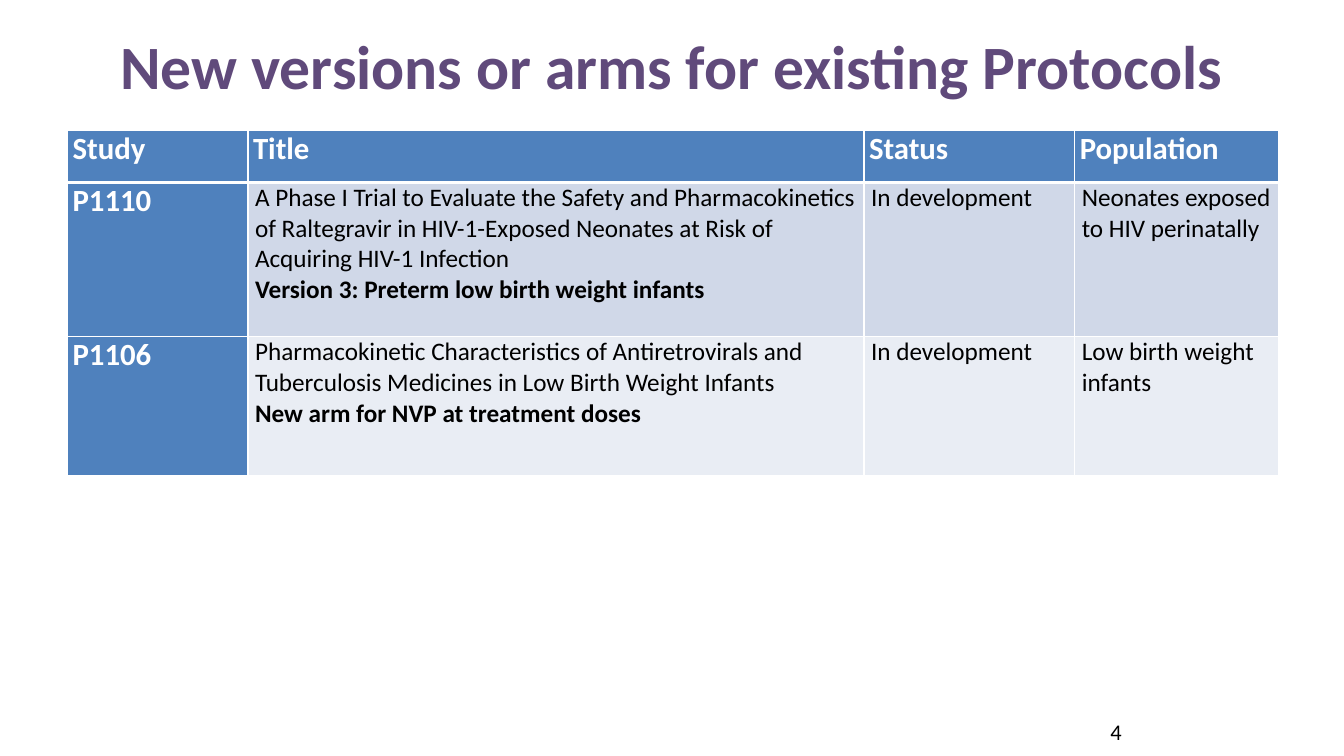
from dataclasses import dataclass
from lxml.etree import SubElement
from pptx import Presentation
from pptx.dml.color import RGBColor as RGB
from pptx.enum.text import MSO_ANCHOR as Anchor, PP_ALIGN as Align
from pptx.oxml.ns import qn
from pptx.util import Inches, Pt


@dataclass(frozen=True)
class Theme:
    font: str = "Calibri"
    heading: str = "604A7B"
    accent: str = "4F81BD"
    bands: tuple = ("D0D8E8", "E9EDF4")
    light: str = "FFFFFF"
    dark: str = "000000"
    heading_size: int = 44
    label_size: int = 22
    body_size: int = 18
    number_size: int = 16
    rule: int = 1
    header_rule: int = 3


THEME = Theme()
WIDTH, HEIGHT = 13.33, 7.5
MARGIN = 0.67
TITLE_HEIGHT = 1.29
COLUMNS = (1.79, 6.11, 2.09, 2.02)
ROWS = (0.52, 1.53, 1.38)
HEADINGS = ("Study", "Title", "Status", "Population")
STUDIES = (
    ("P1110",
     ("A Phase I Trial to Evaluate the Safety and Pharmacokinetics of Raltegravir "
      "in HIV-1-Exposed Neonates at Risk of Acquiring HIV-1 Infection",
      "Version 3: Preterm low birth weight infants"),
     "In development", "Neonates exposed to HIV perinatally"),
    ("P1106",
     ("Pharmacokinetic Characteristics of Antiretrovirals and Tuberculosis "
      "Medicines in Low Birth Weight Infants",
      "New arm for NVP at treatment doses"),
     "In development", "Low birth weight infants"),
)


def write(paragraph, text, size, color, bold=False, align=Align.LEFT):
    paragraph.alignment = align
    run = paragraph.add_run()
    run.text = text
    run.font.name = THEME.font
    run.font.size = Pt(size)
    run.font.bold = bold
    run.font.color.rgb = RGB.from_string(color)


def add_line(slide, box, text, **style):
    frame = slide.shapes.add_textbox(*map(Inches, box)).text_frame
    frame.word_wrap = True
    frame.vertical_anchor = Anchor.MIDDLE
    write(frame.paragraphs[0], text, align=Align.CENTER, **style)


def set_borders(cell, **widths):
    properties = cell._tc.get_or_add_tcPr()
    for position, side in enumerate("LRTB"):
        width = widths.get(side, THEME.rule)
        border = SubElement(properties, qn(f"a:ln{side}"), w=str(Pt(width)))
        fill = SubElement(border, qn("a:solidFill"))
        SubElement(fill, qn("a:srgbClr"), val=THEME.light)
        properties.insert(position, border)


def fill_cell(cell, content, background, is_label):
    cell.margin_left = cell.margin_right = Inches(0.05 if is_label else 0.07)
    cell.margin_top = cell.margin_bottom = 0
    cell.fill.solid()
    cell.fill.fore_color.rgb = RGB.from_string(background)
    lines = (content,) if isinstance(content, str) else content
    frame = cell.text_frame
    for index, line in enumerate(lines):
        paragraph = frame.add_paragraph() if index else frame.paragraphs[0]
        if is_label:
            write(paragraph, line, THEME.label_size, THEME.light, bold=True)
        else:
            write(paragraph, line, THEME.body_size, THEME.dark, bold=index > 0)


def add_studies(slide, left, top):
    box = map(Inches, (left, top, sum(COLUMNS), sum(ROWS)))
    studies = slide.shapes.add_table(len(ROWS), len(COLUMNS), *box).table
    studies.first_row = studies.horz_banding = False
    for column, width in zip(studies.columns, COLUMNS):
        column.width = Inches(width)
    for row, height in zip(studies.rows, ROWS):
        row.height = Inches(height)
    for r, entries in enumerate((HEADINGS, *STUDIES)):
        for c, content in enumerate(entries):
            is_label = r == 0 or c == 0
            background = THEME.accent if is_label else THEME.bands[r - 1]
            cell = studies.cell(r, c)
            fill_cell(cell, content, background, is_label)
            heavy = {0: "B", 1: "T"}.get(r)
            set_borders(cell, **({heavy: THEME.header_rule} if heavy else {}))


def main():
    deck = Presentation()
    deck.slide_width, deck.slide_height = Inches(WIDTH), Inches(HEIGHT)
    slide = deck.slides.add_slide(deck.slide_layouts[6])
    add_line(slide, (10.57, 7.06, 1, 0.4), "4",
             size=THEME.number_size, color=THEME.dark)
    add_line(slide, (MARGIN, 0, WIDTH - 2 * MARGIN, TITLE_HEIGHT),
             "New versions or arms for existing Protocols",
             size=THEME.heading_size, color=THEME.heading, bold=True)
    add_studies(slide, MARGIN, TITLE_HEIGHT)
    deck.save("out.pptx")


if __name__ == "__main__":
    main()
